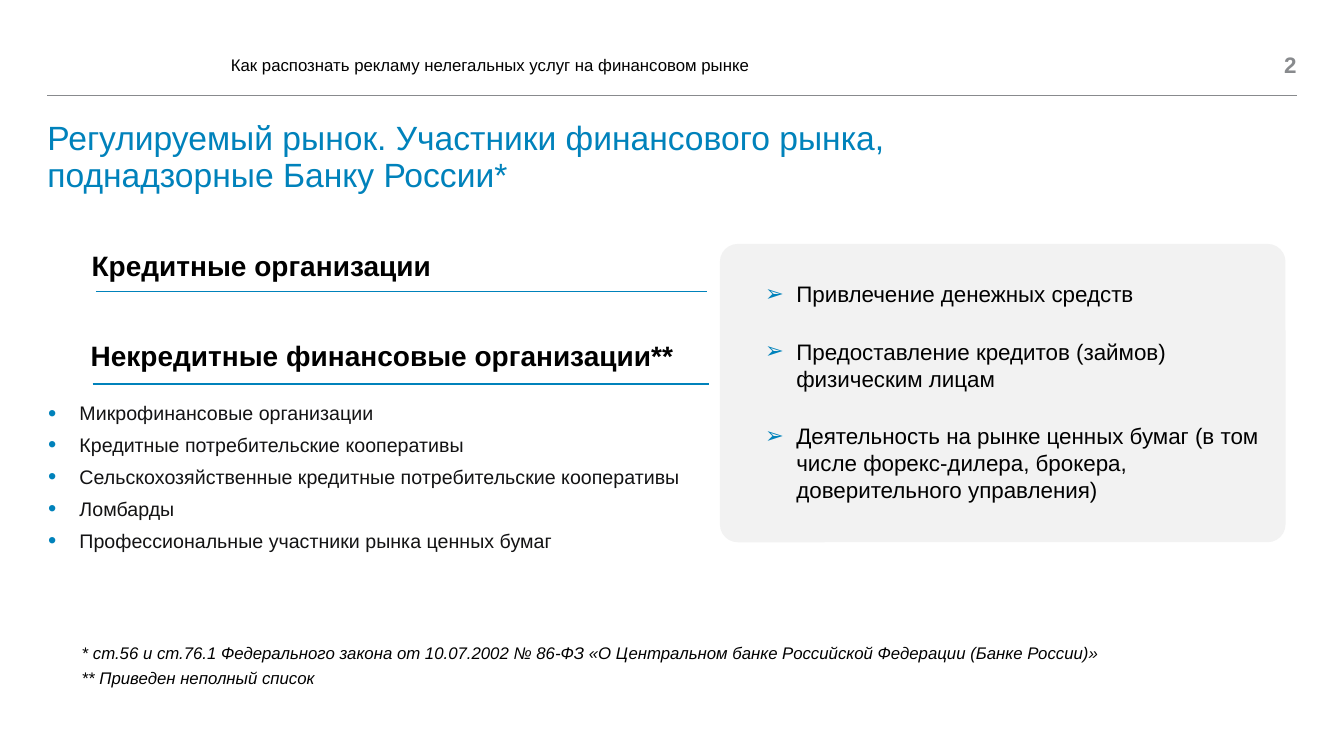
from lxml import etree
from pptx import Presentation, util as u
from pptx.dml.color import RGBColor
from pptx.enum import shapes, text
from pptx.oxml.ns import qn

PX = 9144  # 100 px to the inch
BLUE, GREY, PANEL, BLACK, INK = "0082BB", "888A8D", "F2F2F2", "000000", "131314"
INDENT = 31
LEFT, RIGHT = 47, 1286


def px(length):
    return u.Emu(length * PX)


def rgb(value):
    return RGBColor.from_string(value)


def add_bullet(paragraph, mark, percent):
    props = paragraph._p.get_or_add_pPr()
    props.set("marL", str(px(INDENT)))
    props.set("indent", str(-px(INDENT)))
    colour = etree.SubElement(props, qn("a:buClr"))
    etree.SubElement(colour, qn("a:srgbClr"), val=BLUE)
    etree.SubElement(props, qn("a:buSzPct"), val=str(percent * 1000))
    etree.SubElement(props, qn("a:buFont"), typeface="Arial")
    etree.SubElement(props, qn("a:buChar"), char=mark)


def add_text(slide, box, lines, size, color=BLACK, bold=False, italic=False,
             align=text.PP_ALIGN.LEFT, anchor=text.MSO_ANCHOR.TOP, insets=(10, 5),
             wrap=True, after=0, spacing=1.0, mark=None, mark_percent=100):
    frame = slide.shapes.add_textbox(*map(px, box)).text_frame
    frame.word_wrap = wrap
    frame.vertical_anchor = anchor
    frame.margin_left = frame.margin_right = px(insets[0])
    frame.margin_top = frame.margin_bottom = px(insets[1])
    for number, line in enumerate(lines):
        paragraph = frame.add_paragraph() if number else frame.paragraphs[0]
        paragraph.text = line
        paragraph.alignment = align
        paragraph.line_spacing = spacing
        paragraph.space_after = u.Pt(after)
        if mark:
            add_bullet(paragraph, mark, mark_percent)
        for run in paragraph.runs:
            font = run.font
            font.name, font.size = "Arial", u.Pt(size)
            font.bold, font.italic = bold, italic
            font.color.rgb = rgb(color)


def add_rule(slide, left, right, y, color, weight):
    rule = slide.shapes.add_connector(
        shapes.MSO_CONNECTOR.STRAIGHT, px(left), px(y), px(right), px(y))
    rule.line.color.rgb = rgb(color)
    rule.line.width = u.Pt(weight)
    etree.SubElement(rule._element.spPr, qn("a:effectLst"))


def add_header(slide, left, top, width, height):
    middle = text.MSO_ANCHOR.MIDDLE
    add_rule(slide, left, left + width, top + 48, GREY, 0.5)
    add_text(slide, (left + width - 81, top, 81, height), ["2"], 16, GREY, bold=True,
             align=text.PP_ALIGN.RIGHT, anchor=middle, insets=(0, 0))
    add_text(slide, (left + 182, top, 1017, height),
             ["Как распознать рекламу нелегальных услуг на финансовом рынке"],
             12, anchor=middle, insets=(0, 0))


def add_title(slide, *box):
    add_text(slide, box,
             ["Регулируемый рынок. Участники финансового рынка,\vподнадзорные Банку России*"],
             24, BLUE, insets=(0, 0), spacing=0.9)


def add_organizations(slide, left, top, width, height):
    add_text(slide, (left + 43, top, 360, 44), ["Кредитные организации"],
             20, bold=True, wrap=False)
    add_rule(slide, left + 57, left + 663, top + 47, BLUE, 1)
    add_text(slide, (left + 42, top + 89, 603, 44),
             ["Некредитные финансовые организации**"], 20, bold=True, wrap=False)
    add_rule(slide, left + 54, left + 665, top + 139, BLUE, 1)
    list_top = 151
    add_text(slide, (left, top + list_top, width, height - list_top), [
        "Микрофинансовые организации",
        "Кредитные потребительские кооперативы",
        "Сельскохозяйственные кредитные потребительские кооперативы",
        "Ломбарды",
        "Профессиональные участники рынка ценных бумаг",
    ], 14, INK, wrap=False, after=6, mark="•", mark_percent=120)


def add_activities(slide, left, top, width, height):
    panel = slide.shapes.add_shape(
        shapes.MSO_SHAPE.ROUNDED_RECTANGLE, *map(px, (left, top, width, height)))
    panel.adjustments[0] = 0.06
    panel.shadow.inherit = False
    panel.fill.solid()
    panel.fill.fore_color.rgb = rgb(PANEL)
    panel.line.fill.background()
    add_text(slide, (left + 35, top + 31, width - 36, height - 63), [
        "Привлечение денежных средств",
        "Предоставление кредитов (займов) физическим лицам",
        "Деятельность на рынке ценных бумаг (в том числе форекс-дилера, "
        "брокера, доверительного управления)",
    ], 16, after=22, mark="➢")


def add_footnotes(slide, *box):
    add_text(slide, box, [
        "* ст.56 и ст.76.1 Федерального закона от 10.07.2002 № 86-ФЗ "
        "«О Центральном банке Российской Федерации (Банке России)»",
        "** Приведен неполный список",
    ], 12, italic=True, insets=(12, 6), after=3)


def main():
    deck = Presentation()
    deck.slide_width, deck.slide_height = px(1333), px(750)
    slide = deck.slides.add_slide(deck.slide_layouts[6])
    add_header(slide, LEFT, 47, RIGHT - LEFT, 35)
    add_title(slide, LEFT, 121, RIGHT - LEFT, 66)
    add_organizations(slide, 38, 242, 651, 313)
    add_activities(slide, 714, 242, 561, 296)
    add_footnotes(slide, 69, 632, 1228, 56)
    deck.save("out.pptx")


if __name__ == "__main__":
    main()
